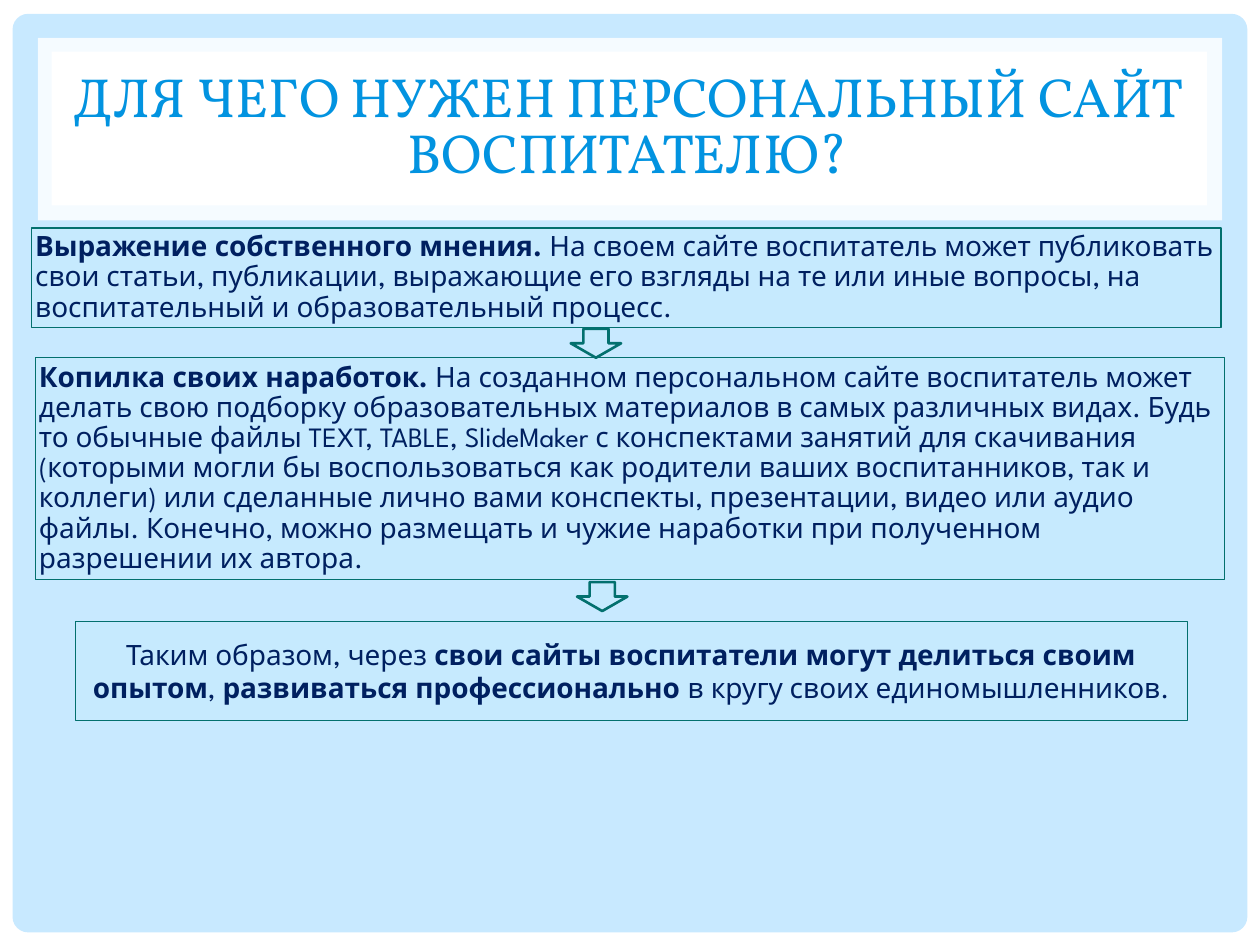
from lxml import etree
from pptx import Presentation
from pptx.dml.color import RGBColor
from pptx.enum.shapes import MSO_SHAPE
from pptx.enum.text import MSO_ANCHOR, PP_ALIGN
from pptx.oxml.ns import qn
from pptx.util import Inches, Pt

RECT, ROUNDED, DOWN = MSO_SHAPE.RECTANGLE, MSO_SHAPE.ROUNDED_RECTANGLE, MSO_SHAPE.DOWN_ARROW
LEFT, CENTER = PP_ALIGN.LEFT, PP_ALIGN.CENTER
MIDDLE = MSO_ANCHOR.MIDDLE
WHITE, SKY, PALE, TEAL = "FFFFFF", "C8E9FF", "C6EAFE", "03706E"
NAVY, AZURE = "002060", "0293E0"
BODY_FONT, TITLE_FONT = "League Spartan", "Vollkorn"

OPINION = [
    ("Выражение собственного мнения. ", True),
    ("На своем сайте воспитатель может публиковать свои статьи, публикации, "
     "выражающие его взгляды на те или иные вопросы, на воспитательный и "
     "образовательный процесс.", False),
]
COLLECTION = [
    ("Копилка своих наработок. ", True),
    ("На созданном персональном сайте воспитатель может делать свою подборку "
     "образовательных материалов в самых различных видах. Будь то обычные файлы "
     "TEXT, TABLE, SlideMaker с конспектами занятий для скачивания (которыми могли бы "
     "воспользоваться как родители ваших воспитанников, так и коллеги) или сделанные "
     "лично вами конспекты, презентации, видео или аудио файлы. Конечно, можно "
     "размещать и чужие наработки при полученном разрешении их автора.", False),
]
CONCLUSION = [
    ("Таким образом, через ", False),
    ("свои сайты воспитатели могут делиться своим опытом", True),
    (", ", False),
    ("развиваться профессионально ", True),
    ("в кругу своих единомышленников.", False),
]


def rgb(value):
    """Return the colour for a hex string."""
    return RGBColor.from_string(value)


def add_panel(slide, kind, box, fill, line_width=0):
    """Add a filled shape, outlined in teal if a line width is given."""
    panel = slide.shapes.add_shape(kind, *map(Inches, box))
    panel.shadow.inherit = False
    panel.fill.solid()
    panel.fill.fore_color.rgb = rgb(fill)
    if line_width:
        panel.line.color.rgb = rgb(TEAL)
        panel.line.width = Pt(line_width)
    else:
        panel.line.fill.background()
    return panel


def set_opacity(panel, percent):
    """Make the solid fill of a panel partly transparent."""
    color = panel.fill._xPr.find(qn("a:solidFill"))[0]
    etree.SubElement(color, qn("a:alpha"), val=str(percent * 1000))


def write_text(shape, runs, font, size, color, align, spacing=1.0):
    """Write one paragraph of (text, bold) runs into a shape."""
    frame = shape.text_frame
    frame.word_wrap = True
    frame.vertical_anchor = MIDDLE
    paragraph = frame.paragraphs[0]
    paragraph.alignment = align
    paragraph.line_spacing = spacing
    for text, bold in runs:
        run = paragraph.add_run()
        run.text = text
        run.font.name = font
        run.font.size = Pt(size)
        run.font.bold = bold
        run.font.color.rgb = rgb(color)


def add_backdrop(slide):
    """Add the page frame and the layered title plate."""
    slide.background.fill.solid()
    slide.background.fill.fore_color.rgb = rgb(SKY)
    add_panel(slide, RECT, (0, 0, 10, 7.5), WHITE)
    page = add_panel(slide, ROUNDED, (0.1, 0.11, 9.8, 7.29), SKY)
    page.adjustments[0] = 0.017
    set_opacity(add_panel(slide, RECT, (0.3, 0.3, 9.4, 1.45), WHITE), 83)
    add_panel(slide, RECT, (0.41, 0.41, 9.17, 1.22), WHITE)


def add_title(slide, text):
    """Add the centred slide title."""
    title = slide.shapes.add_textbox(*map(Inches, (0.47, 0.45, 9.03, 1.14)))
    write_text(title, [(text, False)], TITLE_FONT, 31.5, AZURE, CENTER, 0.86)


def add_reason(slide, box, runs):
    """Add a left-aligned reason box with narrow margins."""
    reason = add_panel(slide, RECT, box, PALE, 0.75)
    frame = reason.text_frame
    frame.margin_left = frame.margin_right = Inches(0.03)
    frame.margin_top = frame.margin_bottom = Inches(0.03)
    write_text(reason, runs, BODY_FONT, 16, NAVY, LEFT, 0.9)


def main():
    """Build and save the slide."""
    deck = Presentation()
    deck.slide_width, deck.slide_height = Inches(10), Inches(7.5)
    slide = deck.slides.add_slide(deck.slide_layouts[6])
    add_backdrop(slide)
    add_title(slide, "ДЛЯ ЧЕГО НУЖЕН ПЕРСОНАЛЬНЫЙ САЙТ ВОСПИТАТЕЛЮ?")
    add_reason(slide, (0.28, 2.84, 9.44, 1.76), COLLECTION)
    add_reason(slide, (0.25, 1.81, 9.44, 0.79), OPINION)
    conclusion = add_panel(slide, RECT, (0.6, 4.93, 8.82, 0.79), PALE, 0.25)
    write_text(conclusion, CONCLUSION, BODY_FONT, 16, NAVY, CENTER)
    for left, top in ((4.53, 2.61), (4.58, 4.62)):
        add_panel(slide, DOWN, (left, top, 0.4, 0.23), PALE, 1.5)
    deck.save("out.pptx")


if __name__ == "__main__":
    main()
